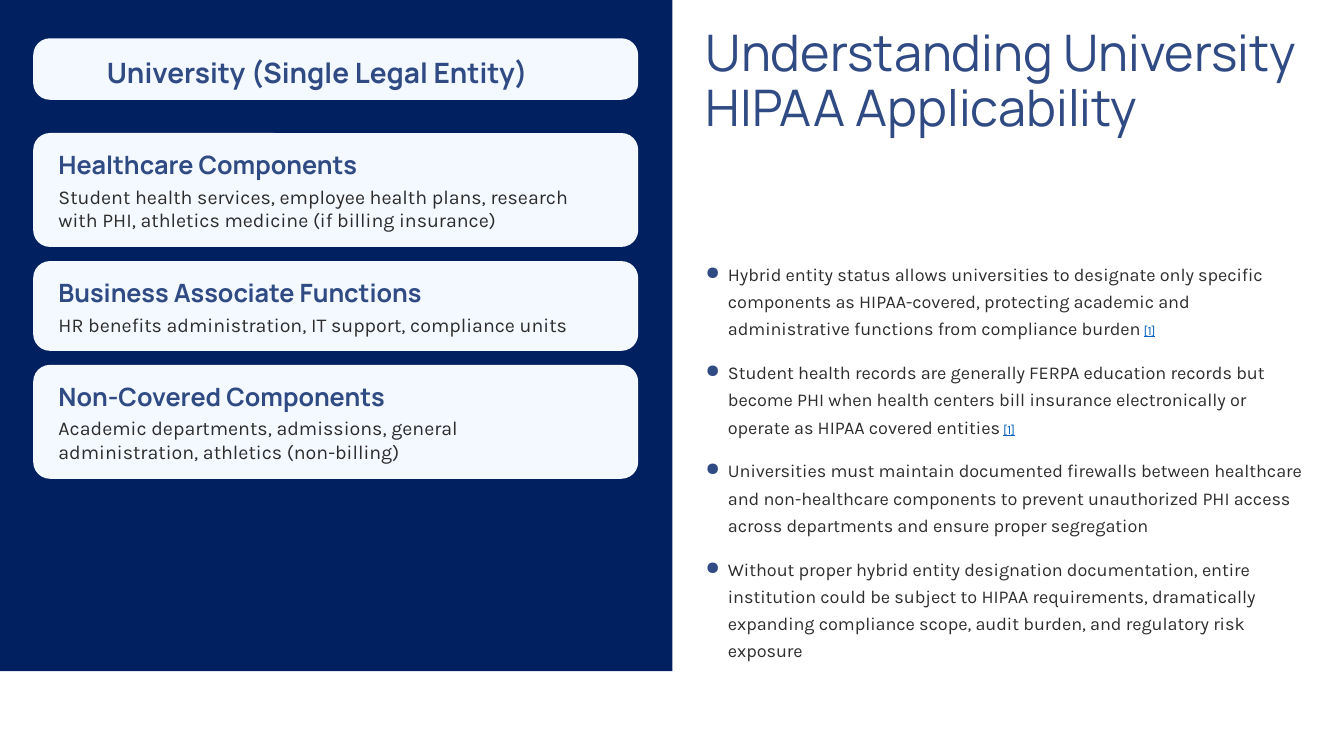
from lxml import etree
from pptx import Presentation, util as u
from pptx.dml.color import RGBColor
from pptx.enum import shapes, text
from pptx.oxml import ns

COLORS = {
    "panel": "002060",
    "card": "F4F8FF",
    "heading": "304B84",
    "body": "2D2D2D",
    "space": "243E75",
    "citation": "0563C1",
}
HEADING_FONT, BODY_FONT = "Manrope", "Karla"
CARD_LEFT, CARD_WIDTH, CARD_RADIUS, CARD_GAP = 0.33, 6, 0.166, 0.14
TEXT_LEFT, TEXT_WIDTH = 0.58, 5.17

# Heading, description, number of description lines
CARDS = [
    ("Healthcare Components",
     "Student health services, employee health plans, research with PHI, "
     "athletics medicine (if billing insurance)", 2),
    ("Business Associate Functions",
     "HR benefits administration, IT support, compliance units", 1),
    ("Non-Covered Components",
     "Academic departments, admissions, general administration, "
     "athletics (non-billing)", 2),
]

# Statement, citation mark
POINTS = [
    ("Hybrid entity status allows universities to designate only specific "
     "components as HIPAA-covered, protecting academic and administrative "
     "functions from compliance burden", "[1]"),
    ("Student health records are generally FERPA education records but become "
     "PHI when health centers bill insurance electronically or operate as "
     "HIPAA covered entities", "[1]"),
    ("Universities must maintain documented firewalls between healthcare and "
     "non-healthcare components to prevent unauthorized PHI access across "
     "departments and ensure proper segregation", None),
    ("Without proper hybrid entity designation documentation, entire "
     "institution could be subject to HIPAA requirements, dramatically "
     "expanding compliance scope, audit burden, and regulatory risk exposure",
     None),
]


class SlideBuilder:
    def __init__(self, page):
        self.page = page

    def style(self, font, name, size, color, bold=False):
        font.name, font.size, font.bold = name, u.Pt(size), bold
        font.color.rgb = RGBColor.from_string(COLORS[color])

    def prepare(self, frame):
        frame.word_wrap = True
        frame.auto_size = text.MSO_AUTO_SIZE.NONE
        frame.vertical_anchor = text.MSO_ANCHOR.TOP
        frame.margin_left = frame.margin_right = 0
        frame.margin_top = frame.margin_bottom = 0

    def title(self, words, left, top, width, height):
        title = self.page.shapes.title
        title.left, title.top = u.Inches(left), u.Inches(top)
        title.width, title.height = u.Inches(width), u.Inches(height)
        self.prepare(title.text_frame)
        para = title.text_frame.paragraphs[0]
        para.text = words
        para.alignment = text.PP_ALIGN.LEFT
        para.line_spacing = 0.9
        self.style(para.font, HEADING_FONT, 36, "heading")

    def block(self, left, top, width, height, color, radius=0):
        kind = shapes.MSO_SHAPE.ROUNDED_RECTANGLE if radius else shapes.MSO_SHAPE.RECTANGLE
        box = self.page.shapes.add_shape(
            kind, u.Inches(left), u.Inches(top), u.Inches(width), u.Inches(height))
        if radius:
            box.adjustments[0] = radius / height
        box.shadow.inherit = False
        box.fill.solid()
        box.fill.fore_color.rgb = RGBColor.from_string(COLORS[color])
        box.line.fill.background()

    def frame(self, left, top, width, height):
        box = self.page.shapes.add_textbox(
            u.Inches(left), u.Inches(top), u.Inches(width), u.Inches(height))
        self.prepare(box.text_frame)
        return box.text_frame

    def label(self, words, left, top, width, height, name, size, color, bold=False):
        para = self.frame(left, top, width, height).paragraphs[0]
        para.text = words
        self.style(para.font, name, size, color, bold)

    def bullet(self, para):
        properties = para._p.get_or_add_pPr()
        indent = u.Inches(0.22)
        properties.set("marL", str(indent))
        properties.set("indent", str(-indent))
        color = etree.SubElement(properties, ns.qn("a:buClr"))
        etree.SubElement(color, ns.qn("a:srgbClr"), val=COLORS["heading"])
        etree.SubElement(properties, ns.qn("a:buChar"), char="●")

    def points(self, items, left, top, width, height):
        frame = self.frame(left, top, width, height)
        for index, (statement, citation) in enumerate(items):
            para = frame.add_paragraph() if index else frame.paragraphs[0]
            self.bullet(para)
            para.line_spacing = u.Pt(19.4)
            if index:
                para.space_before = u.Pt(12)
            runs = [(statement, 12.9, "body")]
            if citation:
                runs += [(" ", 9.2, "space"), (citation, 9.2, "citation")]
            for words, size, color in runs:
                span = para.add_run()
                span.text = words
                self.style(span.font, BODY_FONT, size, color)
                if color == "citation":
                    span.font.underline = True


def main():
    deck = Presentation()
    deck.slide_width, deck.slide_height = u.Inches(13.33), u.Inches(7.5)
    builder = SlideBuilder(deck.slides.add_slide(deck.slide_layouts[5]))

    # Left panel with the entity banner
    builder.block(0, 0, 6.67, 6.66, "panel")
    builder.block(CARD_LEFT, 0.38, CARD_WIDTH, 0.61, "card", CARD_RADIUS)
    builder.label("University (Single Legal Entity)", 1.06, 0.55, 4.54, 0.34,
                  HEADING_FONT, 20, "heading", True)

    # Component cards, stacked by their number of lines
    top = 1.32
    for heading, description, lines in CARDS:
        height = 0.65 + 0.24 * lines
        builder.block(CARD_LEFT, top, CARD_WIDTH, height, "card", CARD_RADIUS)
        builder.label(heading, TEXT_LEFT, top + 0.16, TEXT_WIDTH, 0.3,
                      HEADING_FONT, 18, "heading", True)
        builder.label(description, TEXT_LEFT, top + 0.51, TEXT_WIDTH, 0.24 * lines,
                      BODY_FONT, 14, "body")
        top += height + CARD_GAP

    # Right side: title and key points
    builder.title("Understanding University HIPAA Applicability", 7, 0.28, 6, 1.82)
    builder.points(POINTS, 7, 2.56, 6, 4.6)

    deck.save("out.pptx")


if __name__ == "__main__":
    main()
